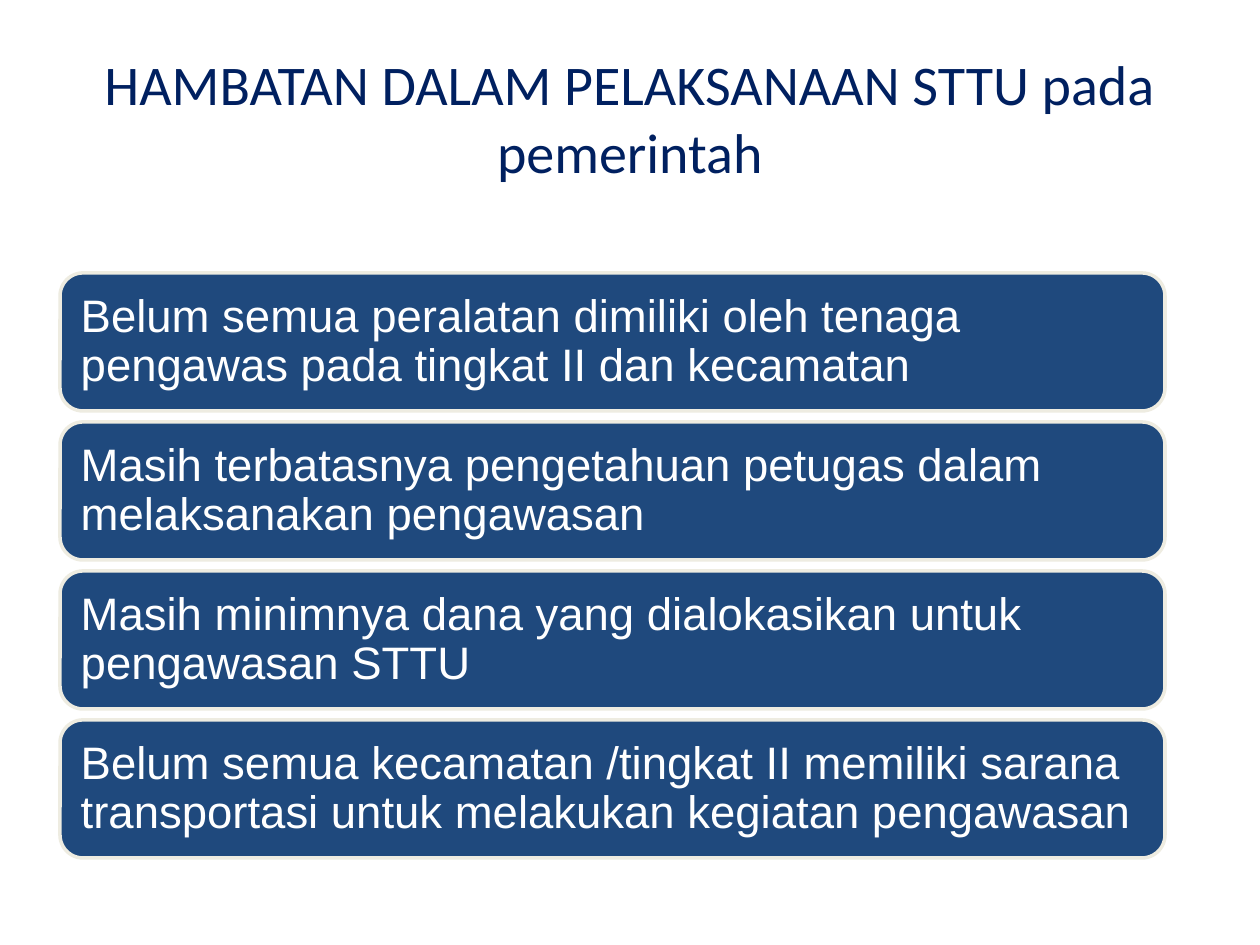
"""Build a slide listing the obstacles to STTU implementation in government."""
from dataclasses import dataclass

from pptx import Presentation
from pptx.dml.color import RGBColor
from pptx.enum.shapes import MSO_SHAPE
from pptx.enum.text import MSO_ANCHOR, PP_ALIGN
from pptx.util import Emu, Pt

PIXELS_PER_INCH = 126
TITLE = "HAMBATAN DALAM PELAKSANAAN STTU pada pemerintah"
OBSTACLES = [
    "Belum semua peralatan dimiliki oleh tenaga pengawas pada tingkat II dan kecamatan",
    "Masih terbatasnya pengetahuan petugas dalam melaksanakan pengawasan",
    "Masih minimnya dana yang dialokasikan untuk pengawasan STTU",
    "Belum semua kecamatan /tingkat II memiliki sarana transportasi untuk melakukan kegiatan pengawasan",
]


@dataclass(frozen=True)
class Theme:
    """Colours, fonts and type sizes of the slide."""

    title_color: RGBColor = RGBColor(0x00, 0x20, 0x60)
    bar_fill: RGBColor = RGBColor(0x1F, 0x49, 0x7D)
    bar_line: RGBColor = RGBColor(0xEE, 0xEC, 0xE1)
    bar_text: RGBColor = RGBColor(0xFF, 0xFF, 0xFF)
    title_font: str = "Calibri"
    bar_font: str = "Arial"
    title_size: int = 32
    bar_size: int = 26


def px(length):
    """Turn pixels into EMU."""
    return Emu(round(length * 914400 / PIXELS_PER_INCH))


class SlideBuilder:
    """Draw themed elements on the current slide."""

    def __init__(self, slide, theme):
        """Keep the slide and its theme."""
        self.slide = slide
        self.theme = theme

    def set_text(self, shape, text, alignment, font_name, size, color):
        """Fill a shape with one vertically centred paragraph."""
        frame = shape.text_frame
        frame.word_wrap = True
        frame.vertical_anchor = MSO_ANCHOR.MIDDLE
        paragraph = frame.paragraphs[0]
        paragraph.text = text
        paragraph.alignment = alignment
        paragraph.font.name = font_name
        paragraph.font.size = Pt(size)
        paragraph.font.color.rgb = color
        return frame

    def title(self, text, left, top, width, height):
        """Add the centred heading."""
        theme = self.theme
        shape = self.slide.shapes.add_textbox(px(left), px(top), px(width), px(height))
        self.set_text(shape, text, PP_ALIGN.CENTER, theme.title_font, theme.title_size, theme.title_color)

    def bar(self, text, left, top, width, height, inset):
        """Add a rounded bar with left-aligned text."""
        theme = self.theme
        shape = self.slide.shapes.add_shape(
            MSO_SHAPE.ROUNDED_RECTANGLE, px(left), px(top), px(width), px(height)
        )
        shape.shadow.inherit = False
        shape.fill.solid()
        shape.fill.fore_color.rgb = theme.bar_fill
        shape.line.color.rgb = theme.bar_line
        shape.line.width = Pt(2)
        frame = self.set_text(shape, text, PP_ALIGN.LEFT, theme.bar_font, theme.bar_size, theme.bar_text)
        frame.margin_left = frame.margin_right = px(inset)
        frame.margin_top = frame.margin_bottom = px(inset)
        frame.paragraphs[0].line_spacing = 0.9


def main():
    """Build and save the presentation."""
    presentation = Presentation()
    presentation.slide_width = px(1260)
    presentation.slide_height = px(945)
    slide = presentation.slides.add_slide(presentation.slide_layouts[6])
    builder = SlideBuilder(slide, Theme())
    builder.title(TITLE, 63, 38, 1134, 158)
    bar_height, gap = 138, 11
    for index, obstacle in enumerate(OBSTACLES):
        builder.bar(obstacle, 60, 273 + index * (bar_height + gap), 1105, bar_height, 14)
    presentation.save("out.pptx")


if __name__ == "__main__":
    main()
